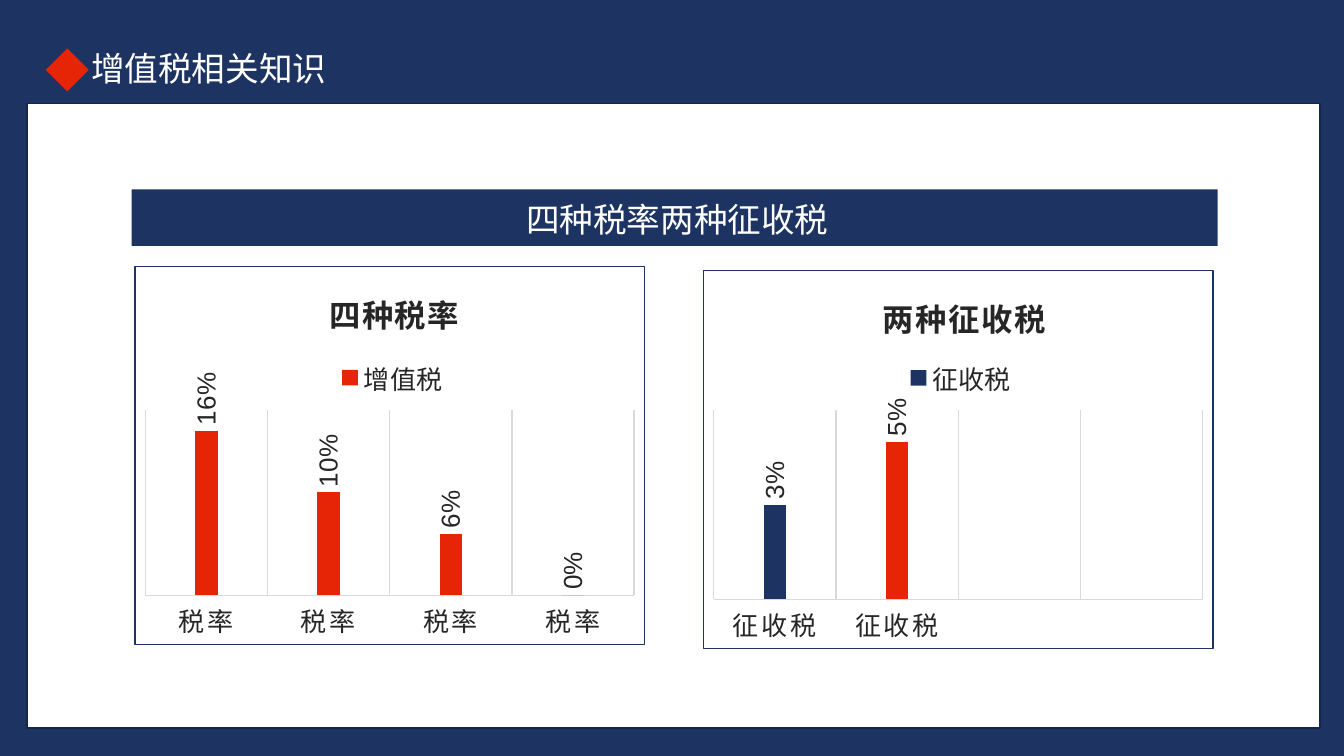
from pptx import Presentation
from pptx.chart.data import CategoryChartData
from pptx.dml.color import RGBColor
from pptx.enum.chart import (XL_CHART_TYPE as Kind, XL_LABEL_POSITION as Spot,
                             XL_LEGEND_POSITION as Side, XL_TICK_MARK as Tick)
from pptx.enum.shapes import MSO_SHAPE as Form
from pptx.enum.text import MSO_ANCHOR as Anchor, PP_ALIGN as Align
from pptx.oxml import parse_xml
from pptx.oxml.ns import nsdecls, qn
from pptx.util import Inches, Pt

COLORS = {"navy": "1D3463", "edge": "152649", "red": "E52505",
          "white": "FFFFFF", "ink": "262626", "grid": "D9D9D9"}
FONT = "Arial"
HEAD = "增值税相关知识"
BANNER = "四种税率两种征收税"

# Layouts are fractions of the chart: x, y for title and legend; x, y, w, h for plot
CHARTS = [
    {"at": (1, 1.98), "title": "四种税率", "name": "增值税", "color": "red",
     "cats": ["税率"] * 4, "vals": [0.16, 0.1, 0.06, 0], "top": 0.18, "points": {},
     "layout": {"title": (0.37, 0.04), "legend": (0.39, 0.23),
                "plotArea": (0.02, 0.38, 0.96, 0.49)}},
    {"at": (5.23, 2.01), "title": "两种征收税", "name": "征收税", "color": "navy",
     "cats": ["征收税"] * 2, "vals": [0.03, 0.05, None, None],
     "top": 0.06, "points": {1: "red"},
     "layout": {"title": (0.34, 0.04), "legend": (0.39, 0.22),
                "plotArea": (0.02, 0.37, 0.96, 0.5)}},
]
SIZE = (3.8, 2.82)


def rgb(name):
    return RGBColor.from_string(COLORS[name])


def paint(fill, name):
    fill.solid()
    fill.fore_color.rgb = rgb(name)


def style(font, size, color, bold=False):
    font.name, font.size, font.bold = FONT, Pt(size), bold
    font.color.rgb = rgb(color)


def add_box(shapes, form, at, fill, line=None):
    box = shapes.add_shape(form, *map(Inches, at))
    box.shadow.inherit = False
    paint(box.fill, fill)
    if line:
        box.line.color.rgb = rgb(line)
        box.line.width = Pt(1)
    else:
        box.line.fill.background()
    return box


def write(frame, text, align=Align.LEFT):
    frame.word_wrap = False
    frame.text = text
    para = frame.paragraphs[0]
    para.alignment = align
    style(para.runs[0].font, 18, "white")


def place(root, tag, spot):
    """Give a chart part a manual layout."""
    part = root.find(".//" + qn("c:" + tag))
    for old in part.findall(qn("c:layout")):
        part.remove(old)
    plot = tag == "plotArea"
    rows = '<c:layoutTarget val="inner"/>' if plot else ""
    rows += '<c:xMode val="edge"/><c:yMode val="edge"/>'
    rows += "".join(f'<c:{key} val="{val}"/>' for key, val in zip("xywh", spot))
    part.insert(0 if plot else 1, parse_xml(
        f'<c:layout {nsdecls("c")}><c:manualLayout>{rows}</c:manualLayout></c:layout>'))


def add_chart(shapes, item):
    data = CategoryChartData(number_format="0%")
    data.categories = item["cats"]
    data.add_series(item["name"], item["vals"])
    chart = shapes.add_chart(Kind.COLUMN_CLUSTERED,
                             *map(Inches, item["at"] + SIZE), data).chart
    style(chart.font, 14, "ink")

    chart.has_title = True
    frame = chart.chart_title.text_frame
    frame.text = item["title"]
    style(frame.paragraphs[0].runs[0].font, 16.8, "ink", bold=True)

    chart.has_legend = True
    chart.legend.position = Side.TOP
    chart.legend.include_in_layout = False
    style(chart.legend.font, 14, "ink")

    axis = chart.category_axis
    axis.major_tick_mark = axis.minor_tick_mark = Tick.NONE
    axis.has_major_gridlines = True
    for line in (axis.format.line, axis.major_gridlines.format.line):
        line.color.rgb = rgb("grid")
        line.width = Pt(0.75)
    style(axis.tick_labels.font, 14, "ink")

    scale = chart.value_axis
    scale.minimum_scale, scale.maximum_scale = 0, item["top"]
    scale.has_major_gridlines = False
    scale.visible = False

    plot = chart.plots[0]
    plot.gap_width, plot.overlap = 444, -90
    plot.vary_by_categories = False
    bars = plot.series[0]
    paint(bars.format.fill, item["color"])
    for num, color in item["points"].items():
        paint(bars.points[num].format.fill, color)
    labels = bars.data_labels
    labels.show_value = True
    labels.position = Spot.OUTSIDE_END
    labels.number_format, labels.number_format_is_linked = "0%", False
    style(labels.font, 14, "ink")

    root = chart.element
    for body in root.xpath(".//c:dLbls/c:txPr/a:bodyPr"):
        body.set("rot", "-5400000")
        body.set("vert", "horz")
    for props in root.xpath(".//c:catAx/c:txPr//a:defRPr | .//c:title//a:rPr"):
        props.set("spc", "120")
    for tag, spot in item["layout"].items():
        place(root, tag, spot)
    root.find(qn("c:chart")).addnext(parse_xml(
        f'<c:spPr {nsdecls("c", "a")}><a:noFill/><a:ln w="{Pt(0.75)}"><a:solidFill>'
        f'<a:srgbClr val="{COLORS["navy"]}"/></a:solidFill></a:ln></c:spPr>'))


deck = Presentation()
deck.slide_width = Inches(10)
deck.slide_height = deck.slide_width * 9 // 16
slide = deck.slides.add_slide(deck.slide_layouts[6])
paint(slide.background.fill, "navy")
shapes = slide.shapes

add_box(shapes, Form.RECTANGLE, (0.2, 0.77, 9.62, 4.65), "white", "edge")
head = shapes.add_textbox(*map(Inches, (0.58, 0.31, 1.97, 0.4)))
write(head.text_frame, HEAD)
add_box(shapes, Form.DIAMOND, (0.34, 0.36, 0.32, 0.32), "red")

for item in CHARTS:
    add_chart(shapes, item)

group = shapes.add_group_shape().shapes
add_box(group, Form.RECTANGLE, (0.98, 1.41, 8.08, 0.42), "navy")
banner = add_box(group, Form.RECTANGLE, (1.06, 1.44, 7.96, 0.38), "navy")
banner.text_frame.vertical_anchor = Anchor.MIDDLE
write(banner.text_frame, BANNER, Align.CENTER)

deck.save("out.pptx")
